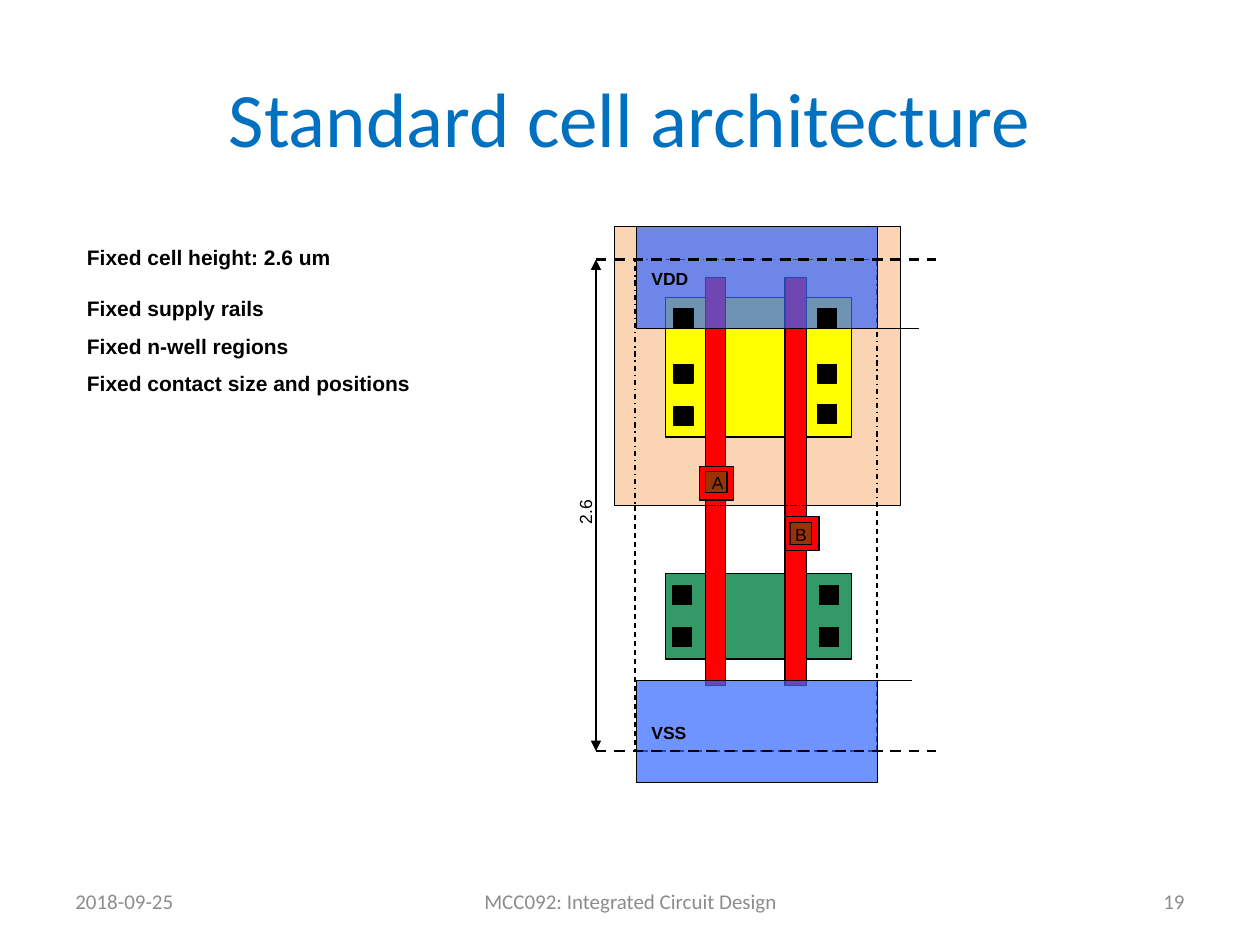
from itertools import product

from lxml import etree
from pptx import Presentation, util as u
from pptx.dml.color import RGBColor
from pptx.enum import dml, shapes, text
from pptx.oxml.ns import qn

COLS, ROWS = 1000, 750
THEME = {
    "title": "0070C0", "footer": "8C8C8C", "ink": "000000",
    "well": "FBD4B4", "p_active": "FFFF00", "n_active": "339966",
    "poly": "FF0000", "metal": "993300", "rail": "3366FF",
    "rail_alpha": 70, "heading_font": "Calibri", "body_font": "Arial",
    "title_size": 44, "body_size": 12, "label_size": 10,
    "thin": 0.75, "thick": 1.5,
}
DASH, DASH_DOT = dml.MSO_LINE.DASH, dml.MSO_LINE.DASH_DOT
LEFT, CENTER, RIGHT = text.PP_ALIGN.LEFT, text.PP_ALIGN.CENTER, text.PP_ALIGN.RIGHT

TITLE = "Standard cell architecture"
FEATURES = [
    ("Fixed cell height: 2.6 um", 15),
    ("Fixed supply rails", 7),
    ("Fixed n-well regions", 7),
    ("Fixed contact size and positions", 7),
]
FOOTERS = [
    ("2018-09-25", 50, 233, LEFT),
    ("MCC092: Integrated Circuit Design", 342, 317, CENTER),
    ("19", 717, 233, RIGHT),
]
REGIONS = [
    ("well", (488, 180, 227, 221)),
    ("p_active", (528, 236, 148, 111)),
    ("n_active", (528, 455, 148, 68)),
]
GATES = [(560, 220, 16, 324), (623, 220, 17, 324)]
CONTACT = 15
DIFFUSION_CONTACTS = [
    *product((535, 649), (289,)), (535, 323), (649, 321),
    *product((534, 650.5), (465, 498)),
]
SUPPLY_CONTACTS = list(product((535, 649), (245,)))
CELL_TOP, WELL_BOTTOM, CELL_BOTTOM = 206, 401, 596
CELL_HALVES = [(CELL_TOP, WELL_BOTTOM, DASH_DOT), (WELL_BOTTOM, CELL_BOTTOM, DASH)]
RAILS = [("VDD", 180, 209), ("VSS", 540, 569)]
RAIL_HEIGHT = 81
RAIL_EDGES = [(694, 261), (689, 540)]
INPUTS = [("A", 555, 370, 560, 374, 558, 371), ("B", 623, 410, 627, 415, 624, 412)]
DIMENSION = "2.6"
DIMENSION_COL, BOUNDARY_END = 473, 743

deck = Presentation()
deck.slide_width, deck.slide_height = u.Inches(10), u.Inches(7.5)
slide = deck.slides.add_slide(deck.slide_layouts[6])


def place(col, row, *size):
    x, y = deck.slide_width / COLS, deck.slide_height / ROWS
    return [int(n * step) for n, step in zip((col, row, *size), (x, y, x, y))]


def color(name):
    return RGBColor.from_string(THEME[name])


def write(box, lines, font="body_font", size="label_size", ink="ink", bold=False,
          align=LEFT, anchor=text.MSO_ANCHOR.TOP, margins=(0.07, 0.04), vertical=False):
    frame = slide.shapes.add_textbox(*place(*box)).text_frame
    frame.word_wrap = not vertical
    frame.vertical_anchor = anchor
    frame.margin_left = frame.margin_right = u.Inches(margins[0])
    frame.margin_top = frame.margin_bottom = u.Inches(margins[1])
    if vertical:
        frame._txBody.bodyPr.set("vert", "vert270")
    for index, (words, gap) in enumerate(lines):
        paragraph = frame.add_paragraph() if index else frame.paragraphs[0]
        paragraph.alignment = align
        paragraph.space_after = u.Pt(gap)
        run = paragraph.add_run()
        run.text = words
        run.font.name, run.font.size = THEME[font], u.Pt(THEME[size])
        run.font.bold, run.font.color.rgb = bold, color(ink)


def stroke(part, width="thin", dash=None):
    part.line.color.rgb = color("ink")
    part.line.width = u.Pt(THEME[width])
    if dash:
        part.line.dash_style = dash


def rect(box, fill=None, dash=None, alpha=None):
    part = slide.shapes.add_shape(shapes.MSO_SHAPE.RECTANGLE, *place(*box))
    part.shadow.inherit = False
    stroke(part, dash=dash)
    if not fill:
        part.fill.background()
        return
    part.fill.solid()
    part.fill.fore_color.rgb = color(fill)
    if alpha:
        tint = part._element.spPr.find(qn("a:solidFill"))[0]
        etree.SubElement(tint, qn("a:alpha")).set("val", str(alpha * 1000))


def line(start, end, width="thin", dash=None, arrows=False):
    part = slide.shapes.add_connector(
        shapes.MSO_CONNECTOR.STRAIGHT, *place(*start), *place(*end))
    stroke(part, width, dash)
    if arrows:
        for tip in ("a:headEnd", "a:tailEnd"):
            etree.SubElement(part.line._ln, qn(tip)).set("type", "triangle")
    etree.SubElement(part._element.spPr, qn("a:effectLst"))


def contacts(spots):
    for spot in spots:
        rect((*spot, CONTACT, CONTACT), "ink")


def draw_cell():
    for fill, box in REGIONS:
        rect(box, fill)
    contacts(DIFFUSION_CONTACTS)
    for gate in GATES:
        rect(gate, "poly")
    for top, bottom, dash in CELL_HALVES:
        rect((504, top, 192, bottom - top), dash=dash)
    for name, top, label_top in RAILS:
        rect((505, top, 191.5, RAIL_HEIGHT), "rail", alpha=THEME["rail_alpha"])
        write((510, label_top, 61, 23), [(name, 0)], bold=True)
    contacts(SUPPLY_CONTACTS)
    for name, pad_x, pad_y, via_x, via_y, label_x, label_y in INPUTS:
        rect((pad_x, pad_y, 27, 27), "poly")
        rect((via_x, via_y, 17, 17), "metal")
        write((label_x, label_y, 25, 24), [(name, 0)])


def draw_dimensions():
    for row in (CELL_TOP, CELL_BOTTOM):
        line((DIMENSION_COL, row), (BOUNDARY_END, row), "thick", DASH)
    line((DIMENSION_COL, CELL_TOP), (DIMENSION_COL, CELL_BOTTOM), arrows=True)
    write((449, 393, 39, 27), [(DIMENSION, 0)], vertical=True)
    for col, row in RAIL_EDGES:
        line((col, row), (col + 35, row))


def main():
    middle = text.MSO_ANCHOR.MIDDLE
    heading = {"font": "heading_font", "anchor": middle, "margins": (0.1, 0.05)}
    write((50, 30, 900, 125), [(TITLE, 0)], size="title_size", ink="title",
          align=CENTER, **heading)
    draw_cell()
    draw_dimensions()
    write((68, 190, 318, 189), FEATURES, size="body_size", bold=True, margins=(0.01, 0.04))
    for words, col, width, align in FOOTERS:
        write((col, 695, width, 40), [(words, 0)], size="body_size", ink="footer",
              align=align, **heading)
    deck.save("out.pptx")


if __name__ == "__main__":
    main()
